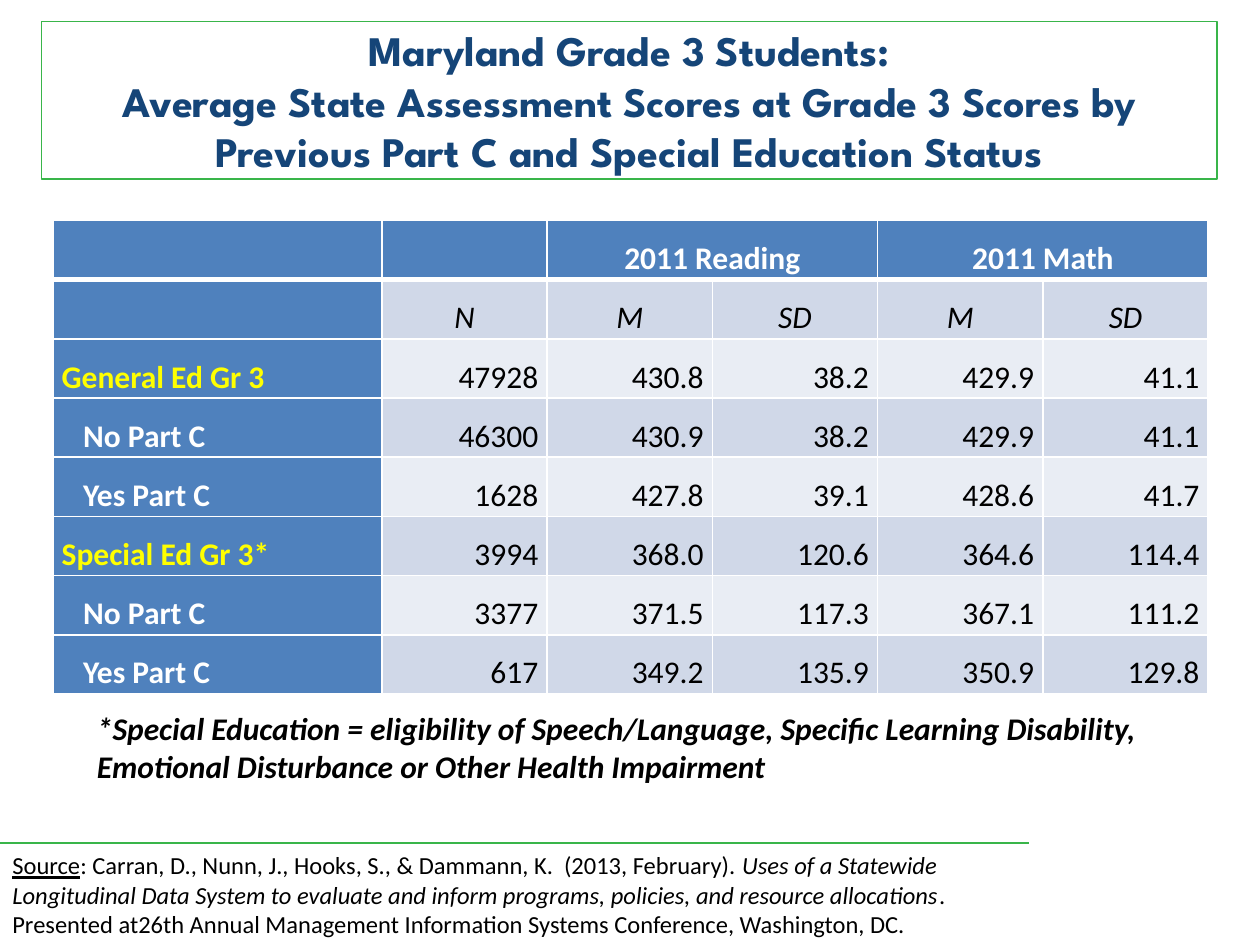
from dataclasses import dataclass

from lxml import etree
from pptx import Presentation
from pptx import util as u
from pptx.dml.color import RGBColor
from pptx.enum import shapes, text
from pptx.oxml import ns


@dataclass(frozen=True)
class Theme:
    green: str = "39B54A"
    navy: str = "154578"
    blue: str = "4F81BD"
    band_dark: str = "D0D8E8"
    band_light: str = "E9EDF4"
    white: str = "FFFFFF"
    black: str = "000000"
    yellow: str = "FFFF00"
    title_font: str = "League Spartan"
    body_font: str = "Calibri"
    title_size: int = 24
    body_size: int = 18
    source_size: int = 14


@dataclass(frozen=True)
class ScoreRow:
    label: str
    values: tuple[str, ...]
    group: bool = False


@dataclass(frozen=True)
class CellStyle:
    fill: str
    color: str
    align: text.PP_ALIGN
    bold: bool = False
    italic: bool = False
    indent: float = 0


@dataclass(frozen=True)
class Run:
    text: str
    italic: bool = False
    underline: bool = False


T = Theme()
ALIGN = text.PP_ALIGN
HEADERS = ("", "", "2011 Reading", "", "2011 Math", "")
MEASURES = ("", "N", "M", "SD", "M", "SD")
SCORES = (
    ScoreRow("General Ed Gr 3", ("47928", "430.8", "38.2", "429.9", "41.1"), True),
    ScoreRow("No Part C", ("46300", "430.9", "38.2", "429.9", "41.1")),
    ScoreRow("Yes Part C", ("1628", "427.8", "39.1", "428.6", "41.7")),
    ScoreRow("Special Ed Gr 3*", ("3994", "368.0", "120.6", "364.6", "114.4"), True),
    ScoreRow("No Part C", ("3377", "371.5", "117.3", "367.1", "111.2")),
    ScoreRow("Yes Part C", ("617", "349.2", "135.9", "350.9", "129.8")),
)
SOURCE = (
    Run("Source", underline=True),
    Run(": Carran, D., Nunn, J., Hooks, S., & Dammann, K.  (2013, February). "),
    Run("Uses of a Statewide Longitudinal Data System to evaluate and inform "
        "programs, policies, and resource allocations", italic=True),
    Run(". Presented at26th Annual Management Information Systems Conference, "
        "Washington, DC."),
)


def rgb(value: str) -> RGBColor:
    return RGBColor.from_string(value)


def set_font(p, name: str, size: int, color: str, bold=None, italic=None) -> None:
    f = p.font
    f.name, f.size, f.bold, f.italic = name, u.Pt(size), bold, italic
    f.color.rgb = rgb(color)


def box(*lengths: float) -> list[u.Inches]:
    return [u.Inches(n) for n in lengths]


def add_rule(s) -> None:
    line = s.shapes.add_connector(
        shapes.MSO_CONNECTOR.STRAIGHT, *box(0, 6.69, 8.17, 6.69))
    line.line.color.rgb = rgb(T.green)
    line.line.width = u.Pt(1.5)
    etree.SubElement(line._element.spPr, ns.qn("a:effectLst"))


def add_title(s) -> None:
    sp = s.shapes.add_shape(
        shapes.MSO_SHAPE.RECTANGLE, *box(0.33, 0.17, 9.33, 1.25))
    sp.shadow.inherit = False
    sp.fill.background()
    sp.line.color.rgb = rgb(T.green)
    sp.line.width = u.Pt(1)
    tf = sp.text_frame
    tf.word_wrap = True
    tf.vertical_anchor = text.MSO_ANCHOR.MIDDLE
    p = tf.paragraphs[0]
    p.text = ("Maryland Grade 3 Students:\v"
              "Average State Assessment Scores at Grade 3 Scores by "
              "Previous Part C and Special Education Status")
    p.alignment = ALIGN.CENTER
    set_font(p, T.title_font, T.title_size, T.navy, bold=True)


def set_borders(cell, widths: dict[str, float]) -> None:
    tc_pr = cell._tc.get_or_add_tcPr()
    for side, width in widths.items():
        ln = etree.SubElement(tc_pr, ns.qn(f"a:ln{side}"), w=str(u.Pt(width)))
        fill = etree.SubElement(ln, ns.qn("a:solidFill"))
        etree.SubElement(fill, ns.qn("a:srgbClr"), val=T.white)


def fill_cell(cell, label: str, style: CellStyle, top: float, bottom: float) -> None:
    set_borders(cell, {"L": 1, "R": 1, "T": top, "B": bottom})
    cell.fill.solid()
    cell.fill.fore_color.rgb = rgb(style.fill)
    cell.margin_left = u.Inches(0.07 + style.indent)
    cell.margin_right = u.Inches(0.07)
    cell.margin_top = cell.margin_bottom = 0
    p = cell.text_frame.paragraphs[0]
    p.text = label
    p.alignment = style.align
    p.line_spacing = 1.5
    set_font(p, T.body_font, T.body_size, style.color, style.bold, style.italic)


def cell_style(row: int, col: int) -> CellStyle:
    if row == 0:
        return CellStyle(T.blue, T.white, ALIGN.CENTER, bold=True)
    if col == 0:
        group = row > 1 and SCORES[row - 2].group
        return CellStyle(T.blue, T.yellow if group else T.white, ALIGN.LEFT,
                         bold=True, indent=0 if group else 0.17)
    band = T.band_dark if row % 2 else T.band_light
    if row == 1:
        return CellStyle(band, T.black, ALIGN.CENTER, italic=True)
    return CellStyle(band, T.black, ALIGN.RIGHT)


def add_scores(s) -> None:
    rows = [HEADERS, MEASURES, *((r.label, *r.values) for r in SCORES)]
    width, label_width, row_height = 9.17, 2.61, 0.47
    table = s.shapes.add_table(
        len(rows), len(HEADERS),
        *box(0.42, 1.75, width, row_height * len(rows))).table
    for i, col in enumerate(table.columns):
        col.width = u.Inches((width - label_width) / 5 if i else label_width)
    for row in table.rows:
        row.height = u.Inches(row_height)
    for i, labels in enumerate(rows):
        for j, label in enumerate(labels):
            fill_cell(table.cell(i, j), label, cell_style(i, j),
                      top=3 if i == 1 else 1, bottom=3 if i == 0 else 1)
    for j in (2, 4):
        table.cell(0, j).merge(table.cell(0, j + 1))


def add_text(s, at: list[u.Inches], runs: tuple[Run, ...], size: int,
             bold=None, italic=None) -> None:
    tf = s.shapes.add_textbox(*at).text_frame
    tf.word_wrap = True
    p = tf.paragraphs[0]
    set_font(p, T.body_font, size, T.black, bold, italic)
    for run in runs:
        r = p.add_run()
        r.text = run.text
        r.font.italic = run.italic or italic
        r.font.underline = run.underline or None


def main() -> None:
    prs = Presentation()
    prs.slide_width, prs.slide_height = box(10, 7.5)
    s = prs.slides.add_slide(prs.slide_layouts[6])
    add_rule(s)
    add_title(s)
    add_scores(s)
    add_text(s, box(0, 6.7, 8, 0.81), SOURCE, T.source_size)
    add_text(s, box(0.67, 5.58, 8.92, 0.71), (Run(
        "*Special Education = eligibility of Speech/Language, Specific Learning "
        "Disability, Emotional Disturbance or Other Health Impairment"),),
        T.body_size, bold=True, italic=True)
    prs.save("out.pptx")


if __name__ == "__main__":
    main()
